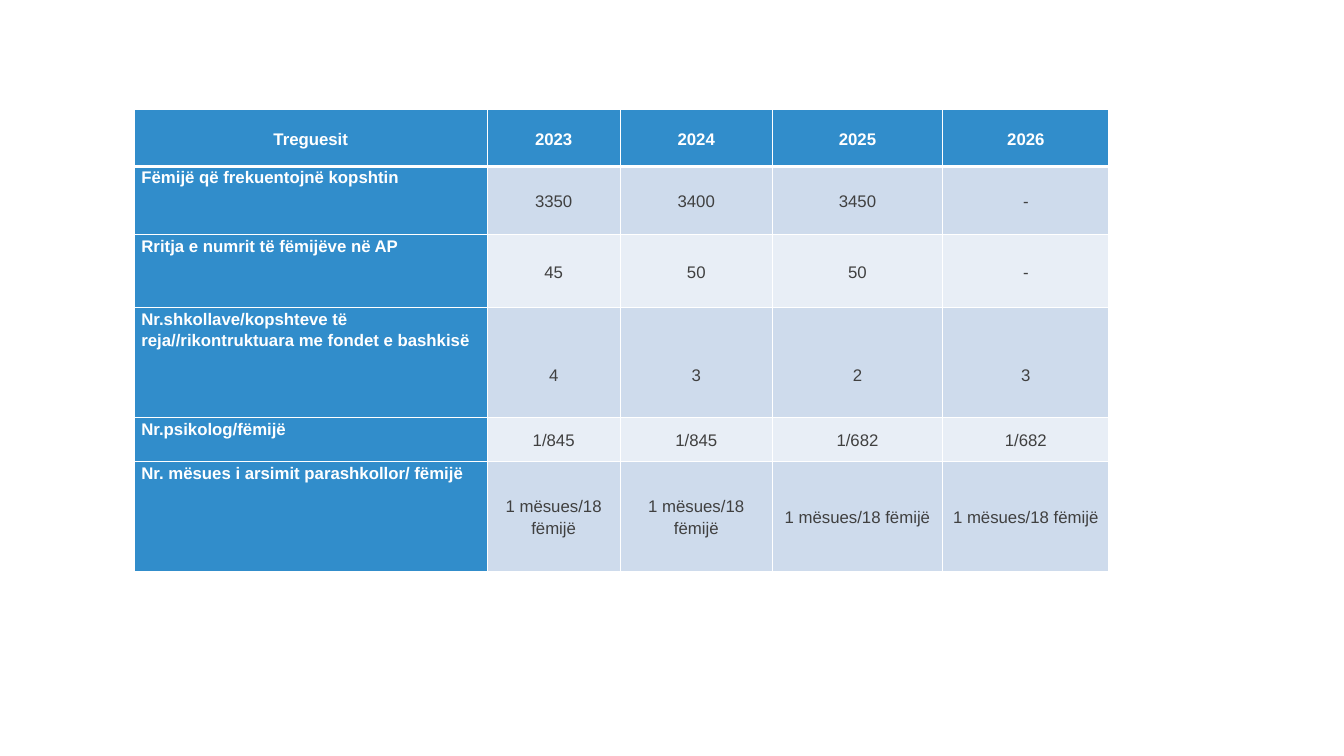
from lxml.etree import SubElement
from pptx import Presentation
from pptx.dml.color import RGBColor
from pptx.enum.text import MSO_ANCHOR, PP_ALIGN
from pptx.oxml.ns import qn
from pptx.util import Pt

INDICATORS = [
    ["Treguesit", "2023", "2024", "2025", "2026"],
    ["Fëmijë që frekuentojnë kopshtin", "3350", "3400", "3450", "-"],
    ["Rritja e numrit të fëmijëve në AP", "45", "50", "50", "-"],
    ["Nr.shkollave/kopshteve të reja//rikontruktuara me fondet e bashkisë",
     "4", "3", "2", "3"],
    ["Nr.psikolog/fëmijë", "1/845", "1/845", "1/682", "1/682"],
    ["Nr. mësues i arsimit parashkollor/ fëmijë"] + ["1 mësues/18 fëmijë"] * 4,
]
COLUMN_WIDTHS = [252, 95, 108.7, 121.7, 118.8]
ROW_HEIGHTS = [41, 48.5, 52, 79, 31, 79]
SCHOOLS_ROW = 3


def color(hex_value):
    return RGBColor.from_string(hex_value)


class SlideBuilder:
    """Holds the table style and the current slide."""

    font_name = "Arial"
    font_size = 12
    heading_fill = "318DCB"
    heading_text = "FFFFFF"
    body_text = "404040"
    band_fills = ["E8EEF6", "CEDBEC"]
    border = "FFFFFF"

    def __init__(self, slide):
        self.slide = slide

    def add_table(self, left, top, rows, widths, heights):
        frame = self.slide.shapes.add_table(
            len(rows), len(widths), Pt(left), Pt(top), Pt(sum(widths)), Pt(sum(heights)))
        table = frame.table
        for column, width in zip(table.columns, widths):
            column.width = Pt(width)
        for row, height in zip(table.rows, heights):
            row.height = Pt(height)
        for row_index, values in enumerate(rows):
            for column_index, text in enumerate(values):
                cell = table.cell(row_index, column_index)
                self.format_cell(cell, text, row_index, column_index)
        return table

    def format_cell(self, cell, text, row_index, column_index):
        is_header = row_index == 0
        is_label = column_index == 0 and not is_header
        is_heading = is_header or is_label

        # Fill, margins and borders
        cell.margin_left = cell.margin_right = Pt(5)
        cell.margin_top = cell.margin_bottom = 0
        cell.vertical_anchor = MSO_ANCHOR.TOP if is_label else MSO_ANCHOR.MIDDLE
        self.add_borders(cell, top=3 if row_index == 1 else 1, bottom=3 if is_header else 1)
        cell.fill.solid()
        cell.fill.fore_color.rgb = color(
            self.heading_fill if is_heading else self.band_fills[row_index % 2])

        # Text
        cell.text_frame.text = text
        paragraph = cell.text_frame.paragraphs[0]
        paragraph.alignment = PP_ALIGN.LEFT if is_label else PP_ALIGN.CENTER
        paragraph.line_spacing = 1.07 if is_label and row_index == 1 else 1.15
        font = paragraph.runs[0].font
        font.name = self.font_name
        font.size = Pt(self.font_size)
        font.bold = is_heading
        font.color.rgb = color(self.heading_text if is_heading else self.body_text)

    def add_borders(self, cell, top, bottom):
        properties = cell._tc.get_or_add_tcPr()
        for side, width in (("L", 1), ("R", 1), ("T", top), ("B", bottom)):
            line = SubElement(properties, qn(f"a:ln{side}"), w=str(Pt(width)))
            fill = SubElement(line, qn("a:solidFill"))
            SubElement(fill, qn("a:srgbClr"), val=self.border)


def main():
    presentation = Presentation()
    presentation.slide_width = Pt(960)
    presentation.slide_height = Pt(540)
    slide = presentation.slides.add_slide(presentation.slide_layouts[6])
    builder = SlideBuilder(slide)

    # Preschool indicators by year
    table = builder.add_table(96, 78, INDICATORS, COLUMN_WIDTHS, ROW_HEIGHTS)

    # The school counts sit one line lower than the middle of their row
    for column_index in range(1, len(COLUMN_WIDTHS)):
        table.cell(SCHOOLS_ROW, column_index).margin_top = Pt(16)

    presentation.save("out.pptx")


if __name__ == "__main__":
    main()
